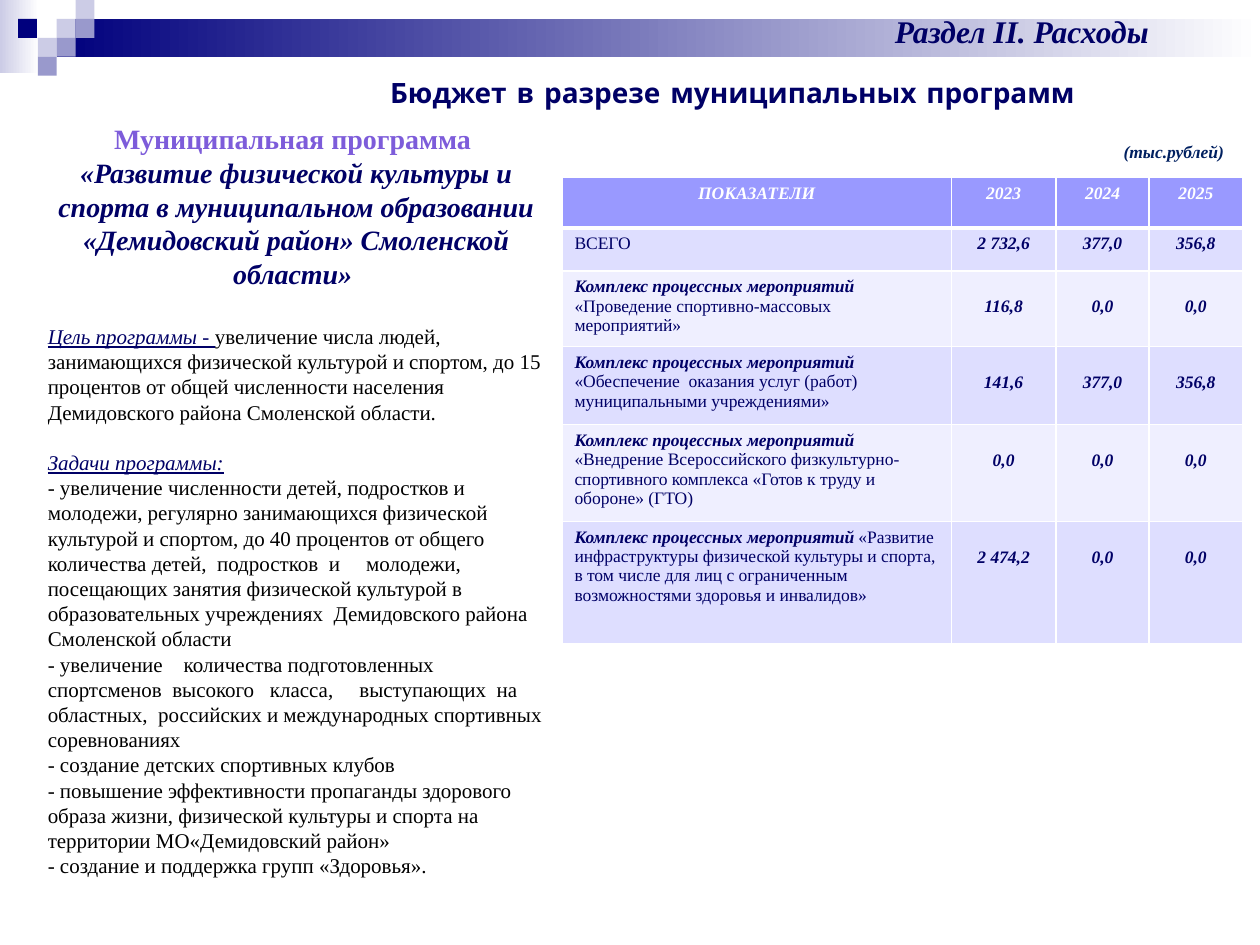
from dataclasses import dataclass

from lxml.etree import SubElement
from pptx import Presentation
from pptx.dml.color import RGBColor
from pptx.enum.shapes import MSO_SHAPE
from pptx.enum.text import PP_ALIGN
from pptx.oxml.ns import qn
from pptx.util import Pt

SERIF = "Times New Roman"
NAVY, BLACK, WHITE = "000066", "000000", "FFFFFF"
PALE, MEDIUM, DEEP = "CCCCE6", "9999CC", "00007D"
HEADER_FILL, ROW_FILLS = "9999FF", ("DEDEFF", "EFEFFF")


@dataclass
class Span:
    text: str
    size: float = 12
    color: str = NAVY
    bold: bool = False
    italic: bool = False
    underline: bool = False
    font: str = SERIF


@dataclass
class Block:
    left: float
    top: float
    width: float
    height: float
    color: str
    fade_to: str = ""


@dataclass
class Indicator:
    values: tuple[str, str, str]
    height: float
    title: str
    lead: str = ""
    value_top: float = 15.1


def rgb(value: str) -> RGBColor:
    return RGBColor.from_string(value)


def add_spans(paragraph, spans: list[Span], align=PP_ALIGN.LEFT) -> None:
    paragraph.alignment = align
    for span in spans:
        run = paragraph.add_run()
        run.text = span.text
        font = run.font
        font.name, font.size = span.font, Pt(span.size)
        font.bold, font.italic, font.underline = span.bold, span.italic, span.underline
        font.color.rgb = rgb(span.color)


def add_box(slide, left: float, top: float, width: float, height: float, wrap: bool = True):
    frame = slide.shapes.add_textbox(Pt(left), Pt(top), Pt(width), Pt(height)).text_frame
    frame.word_wrap = wrap
    return frame


def add_block(slide, block: Block) -> None:
    shape = slide.shapes.add_shape(MSO_SHAPE.RECTANGLE, Pt(block.left), Pt(block.top),
                                   Pt(block.width), Pt(block.height))
    shape.shadow.inherit = False
    shape.line.fill.background()
    if block.fade_to:
        shape.fill.gradient()
        shape.fill.gradient_angle = 0
        for stop, color in zip(shape.fill.gradient_stops, (block.color, block.fade_to)):
            stop.color.rgb = rgb(color)
    else:
        shape.fill.solid()
        shape.fill.fore_color.rgb = rgb(block.color)


def style_cell(cell, fill: str, bottom: float = 1, top: float = 1) -> None:
    properties = cell._tc.get_or_add_tcPr()
    for side, width in (("L", 1), ("R", 1), ("T", top), ("B", bottom)):
        line = SubElement(properties, qn(f"a:ln{side}"), w=str(Pt(width)))
        solid = SubElement(line, qn("a:solidFill"))
        SubElement(solid, qn("a:srgbClr"), val=WHITE)
    cell.fill.solid()
    cell.fill.fore_color.rgb = rgb(fill)


def add_indicators(slide, header: tuple[str, ...], indicators: list[Indicator]) -> None:
    widths, header_height = (222.5, 59.8, 53.3, 53.3), 28.8
    height = header_height + sum(item.height for item in indicators)
    table = slide.shapes.add_table(len(indicators) + 1, len(header), Pt(321.1), Pt(101.5),
                                   Pt(sum(widths)), Pt(height)).table
    table.first_row = table.horz_banding = False
    for column, width in zip(table.columns, widths):
        column.width = Pt(width)

    table.rows[0].height = Pt(header_height)
    for column, label in enumerate(header):
        cell = table.cell(0, column)
        style_cell(cell, HEADER_FILL, bottom=3)
        add_spans(cell.text_frame.paragraphs[0],
                  [Span(label, 10, WHITE, bold=True, italic=True)], PP_ALIGN.CENTER)

    for row, item in enumerate(indicators, 1):
        table.rows[row].height = Pt(item.height)
        fill, top = ROW_FILLS[(row - 1) % 2], 3 if row == 1 else 1
        name = table.cell(row, 0)
        style_cell(name, fill, top=top)
        spans = [Span(item.lead, 10, bold=True, italic=True)] if item.lead else []
        add_spans(name.text_frame.paragraphs[0], spans + [Span(item.title, 10)])
        for column, value in enumerate(item.values, 1):
            cell = table.cell(row, column)
            style_cell(cell, fill, top=top)
            cell.margin_top = Pt(item.value_top)
            add_spans(cell.text_frame.paragraphs[0],
                      [Span(value, 10, bold=True, italic=True)], PP_ALIGN.CENTER)


def add_programme(slide, paragraphs: list[tuple[list[Span], float]]) -> None:
    frame = add_box(slide, 20.2, 66.2, 298, 465)
    for index, (spans, gap) in enumerate(paragraphs):
        paragraph = frame.add_paragraph() if index else frame.paragraphs[0]
        size = spans[0].size
        paragraph.line_spacing = Pt(size * 1.2)
        paragraph.space_before = Pt(gap)
        add_spans(paragraph, spans, PP_ALIGN.CENTER if size == 16 else PP_ALIGN.LEFT)


def main() -> None:
    presentation = Presentation()
    presentation.slide_width, presentation.slide_height = Pt(720), Pt(540)
    slide = presentation.slides.add_slide(presentation.slide_layouts[6])

    # Header band and mosaic
    add_block(slide, Block(0, 0, 22.3, 41.8, PALE, WHITE))
    add_block(slide, Block(32.4, 10.8, 687.6, 21.6, DEEP, WHITE))
    tile = 10.8
    for left, top, color in ((32.4, 10.8, PALE), (43.2, 0, PALE), (43.2, 10.8, MEDIUM),
                             (21.6, 21.6, PALE), (10.3, 10.8, DEEP), (32.4, 21.6, MEDIUM),
                             (21.6, 32.4, MEDIUM)):
        add_block(slide, Block(left, top, tile, tile, color))

    # Programme name, goal and tasks
    tasks = (
        "увеличение численности детей, подростков и молодежи, регулярно занимающихся "
        "физической культурой и спортом, до 40 процентов от общего количества детей,  "
        "подростков  и     молодежи, посещающих занятия физической культурой в "
        "образовательных учреждениях  Демидовского района Смоленской области",
        "увеличение    количества подготовленных спортсменов  высокого   класса,     "
        "выступающих  на областных,  российских и международных спортивных соревнованиях",
        "создание детских спортивных клубов",
        "повышение эффективности пропаганды здорового образа жизни, физической культуры "
        "и спорта на территории МО«Демидовский район»",
        "создание и поддержка групп «Здоровья».",
    )
    add_programme(slide, [
        ([Span("Муниципальная программа ", 16, "7D5CDA", bold=True)], 0),
        ([Span("«Развитие физической культуры и спорта в муниципальном образовании "
               "«Демидовский район» Смоленской области» ", 16, bold=True, italic=True)], 0),
        ([Span("Цель программы - ", italic=True, underline=True),
          Span("увеличение числа людей, занимающихся физической культурой и спортом, до 15 "
               "процентов от общей численности населения Демидовского района Смоленской "
               "области.", color=BLACK)], 19.2),
        ([Span("Задачи программы:", italic=True, underline=True)], 14.4),
        *(([Span(f"- {task}", color=BLACK)], 0) for task in tasks),
    ])

    # Section and slide titles
    section = add_box(slide, 450.7, 3.6, 266.4, 28.8)
    add_spans(section.paragraphs[0],
              [Span("Раздел II. Расходы", 18, bold=True, italic=True)], PP_ALIGN.CENTER)
    title = add_box(slide, 127.4, 39.6, 582.5, 26.6)
    add_spans(title.paragraphs[0],
              [Span("Бюджет в разрезе муниципальных программ", 16, bold=True,
                    font="Comic Neue")], PP_ALIGN.CENTER)

    # Budget table and its unit
    lead = "Комплекс процессных мероприятий "
    add_indicators(slide, ("ПОКАЗАТЕЛИ", "2023", "2024", "2025"), [
        Indicator(("2 732,6", "377,0", "356,8"), 24.5, "ВСЕГО", value_top=3.6),
        Indicator(("116,8", "0,0", "0,0"), 33.8,
                  "«Проведение спортивно-массовых мероприятий»", lead),
        Indicator(("141,6", "377,0", "356,8"), 44.6,
                  "«Обеспечение  оказания услуг (работ) муниципальными учреждениями»", lead),
        Indicator(("0,0", "0,0", "0,0"), 33.8,
                  "«Внедрение Всероссийского физкультурно-спортивного комплекса "
                  "«Готов к труду и обороне» (ГТО)", lead),
        Indicator(("2 474,2", "0,0", "0,0"), 69.8,
                  "«Развитие инфраструктуры физической культуры и спорта, в том числе для "
                  "лиц с ограниченным возможностями здоровья и инвалидов»", lead),
    ])
    unit = add_box(slide, 635, 77, 73.4, 19.4, wrap=False)
    add_spans(unit.paragraphs[0], [Span("(тыс.рублей)", 10, "002060", bold=True, italic=True)])

    presentation.save("out.pptx")


if __name__ == "__main__":
    main()
